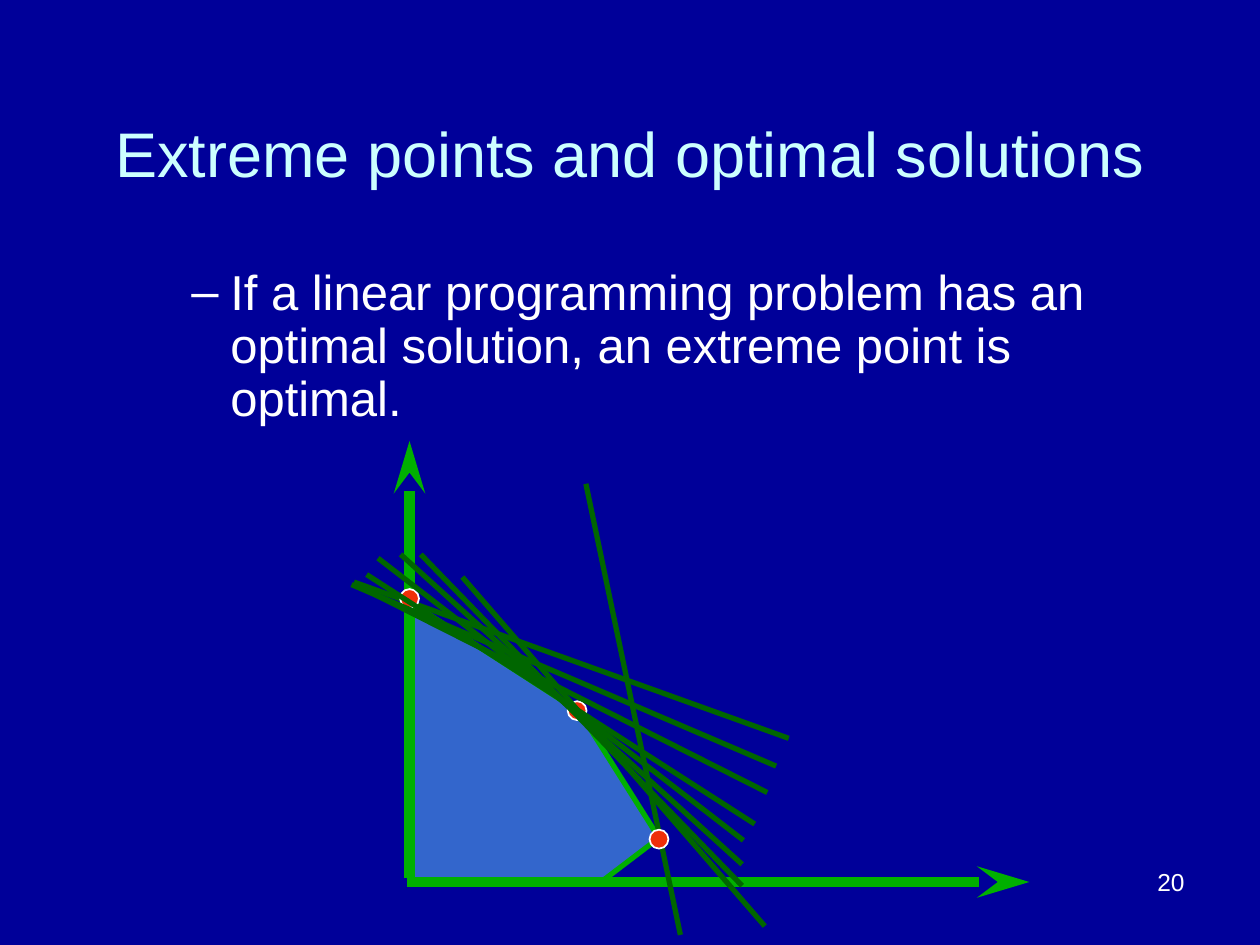
from lxml import etree
from pptx import Presentation
from pptx.dml.color import RGBColor
from pptx.enum.shapes import MSO_CONNECTOR, MSO_SHAPE
from pptx.enum.text import MSO_ANCHOR, PP_ALIGN
from pptx.oxml.ns import qn
from pptx.util import Inches, Pt

STRAIGHT, OVAL = MSO_CONNECTOR.STRAIGHT, MSO_SHAPE.OVAL
LEFT, CENTER, RIGHT = PP_ALIGN.LEFT, PP_ALIGN.CENTER, PP_ALIGN.RIGHT
TOP, MIDDLE = MSO_ANCHOR.TOP, MSO_ANCHOR.MIDDLE

# Content (lengths in inches)
WIDTH, HEIGHT = 10, 7.5
COLORS = {"background": "000099", "title": "CCFFFF", "text": "FFFFFF",
          "region": "3366CC", "axis": "00B000", "objective": "006600",
          "point": "EF2F09", "point_edge": "FFFFFF"}
FONT = "Arial"
POINT_SIZE = 0.15

TITLE = "Extreme points and optimal solutions"
STATEMENT = ("If a linear programming problem has an optimal solution, "
             "an extreme point is optimal.")
PAGE = "20"

FEASIBLE_REGION = [(3.25, 6.96), (3.27, 4.79), (4.6, 5.65), (5.23, 6.65), (4.77, 7)]
AXES = [((3.25, 6.97), (3.25, 3.5)), ((3.23, 7), (8.17, 7))]

# Objective lines and extreme points, from back to front
MIDDLE_POINT, TOP_POINT, LOWER_POINT = (4.58, 5.64), (3.25, 4.75), (5.23, 6.66)
FIGURE = [
    MIDDLE_POINT,
    ((2.81, 4.62), (6.26, 5.86)),
    TOP_POINT,
    ((4.65, 3.84), (5.4, 7.42)),
    LOWER_POINT,
    ((3.67, 4.58), (6.07, 7.35)),
    ((3.34, 4.4), (5.89, 7.03)),
    ((3.18, 4.4), (5.89, 6.86)),
    ((3, 4.43), (5.9, 6.67)),
    ((2.91, 4.56), (5.99, 6.54)),
    ((2.82, 4.64), (6.09, 6.29)),
    ((2.79, 4.64), (6.16, 6.08)),
]


def rgb(role):
    return RGBColor.from_string(COLORS[role])


def style(shape, fill, edge, weight):
    shape.shadow.inherit = False
    shape.fill.solid()
    shape.fill.fore_color.rgb = rgb(fill)
    shape.line.color.rgb = rgb(edge)
    shape.line.width = Pt(weight)


def add_text(slide, text, box, size, role, align=LEFT, anchor=TOP):
    frame = slide.shapes.add_textbox(*map(Inches, box)).text_frame
    frame.word_wrap = True
    frame.vertical_anchor = anchor
    paragraph = frame.paragraphs[0]
    paragraph.alignment = align
    run = paragraph.add_run()
    run.text = text
    for name, value in {"name": FONT, "size": Pt(size)}.items():
        setattr(run.font, name, value)
    run.font.color.rgb = rgb(role)
    return paragraph


def add_bullet(paragraph, mark, margin, indent):
    props = paragraph._p.get_or_add_pPr()
    props.set("marL", str(Inches(margin)))
    props.set("indent", str(Inches(indent)))
    etree.SubElement(props, qn("a:buFont"), typeface=FONT)
    etree.SubElement(props, qn("a:buChar"), char=mark)


def add_line(slide, start, end, role, weight, arrow=False):
    line = slide.shapes.add_connector(STRAIGHT, *map(Inches, start + end))
    line.line.color.rgb = rgb(role)
    line.line.width = Pt(weight)
    if arrow:
        etree.SubElement(line.line._get_or_add_ln(), qn("a:tailEnd"),
                         type="stealth", w="med", len="lg")
    etree.SubElement(line._element.spPr, qn("a:effectLst"))


def add_point(slide, center):
    corner = [Inches(c - POINT_SIZE / 2) for c in center]
    point = slide.shapes.add_shape(OVAL, *corner, Inches(POINT_SIZE), Inches(POINT_SIZE))
    style(point, "point", "point_edge", 1)


def main():
    deck = Presentation()
    deck.slide_width, deck.slide_height = Inches(WIDTH), Inches(HEIGHT)
    slide = deck.slides.add_slide(deck.slide_layouts[6])
    slide.background.fill.solid()
    slide.background.fill.fore_color.rgb = rgb("background")

    # Page number and statement
    add_text(slide, PAGE, (7.17, 6.83, 2.33, 0.52), 14, "text", RIGHT)
    statement = add_text(slide, STATEMENT, (0.92, 2.08, 8.17, 1), 28, "text")
    statement.line_spacing = 0.9
    statement.space_before = Pt(5.6)
    add_bullet(statement, "–", 0.81, -0.31)

    # Feasible region and axes
    first, *rest = [(Inches(x), Inches(y)) for x, y in FEASIBLE_REGION]
    outline = slide.shapes.build_freeform(*first)
    outline.add_line_segments(rest, close=False)
    style(outline.convert_to_shape(), "region", "axis", 3)
    for origin, tip in AXES:
        add_line(slide, origin, tip, "axis", 6, arrow=True)

    # Objective lines through the extreme points
    for item in FIGURE:
        if isinstance(item[0], tuple):
            add_line(slide, *item, "objective", 3)
        else:
            add_point(slide, item)

    # Title, centred across the slide
    margin = WIDTH / 40
    add_text(slide, TITLE, (margin, 0.92, WIDTH - 2 * margin, 0.58), 36, "title",
             CENTER, MIDDLE)
    deck.save("out.pptx")


if __name__ == "__main__":
    main()
